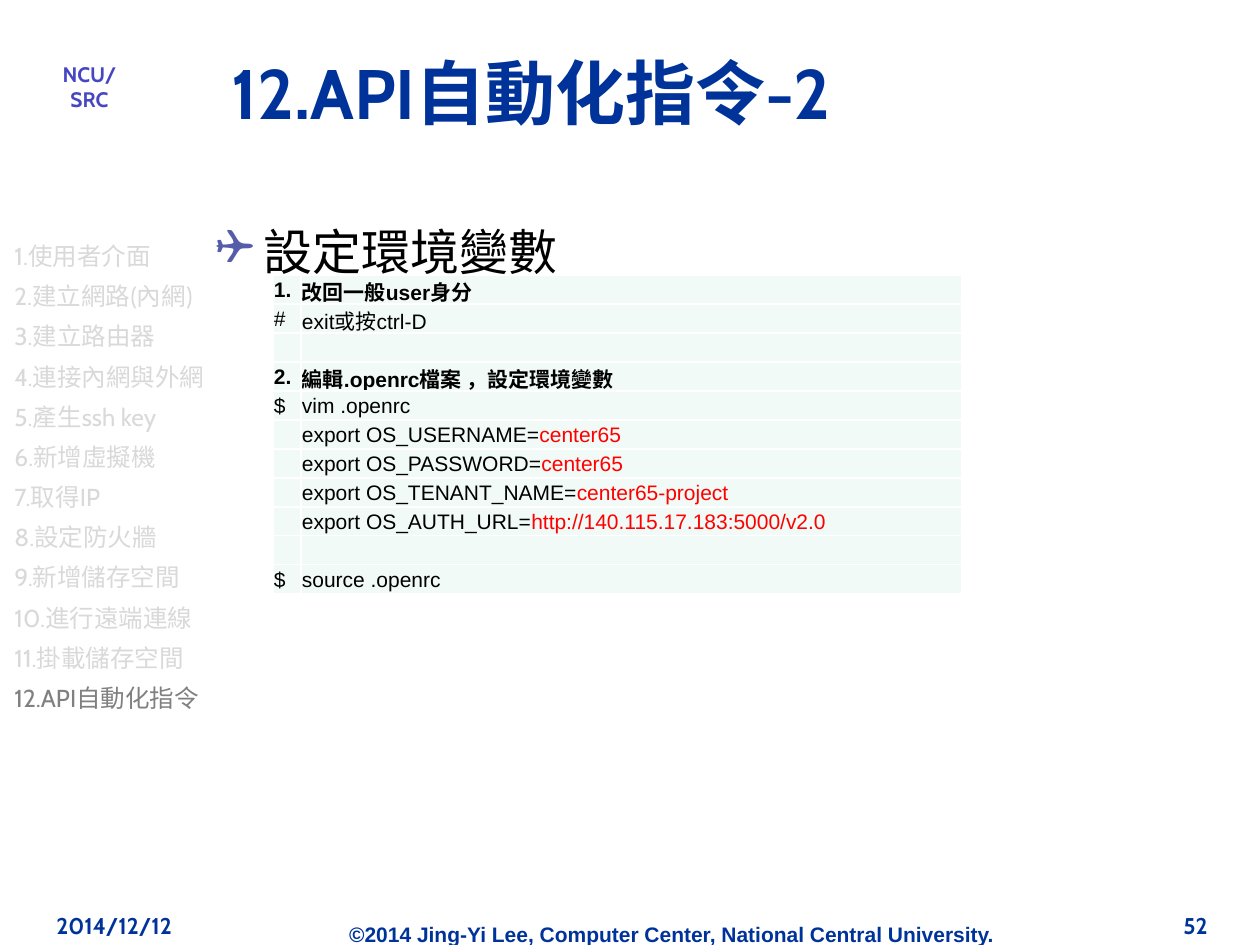
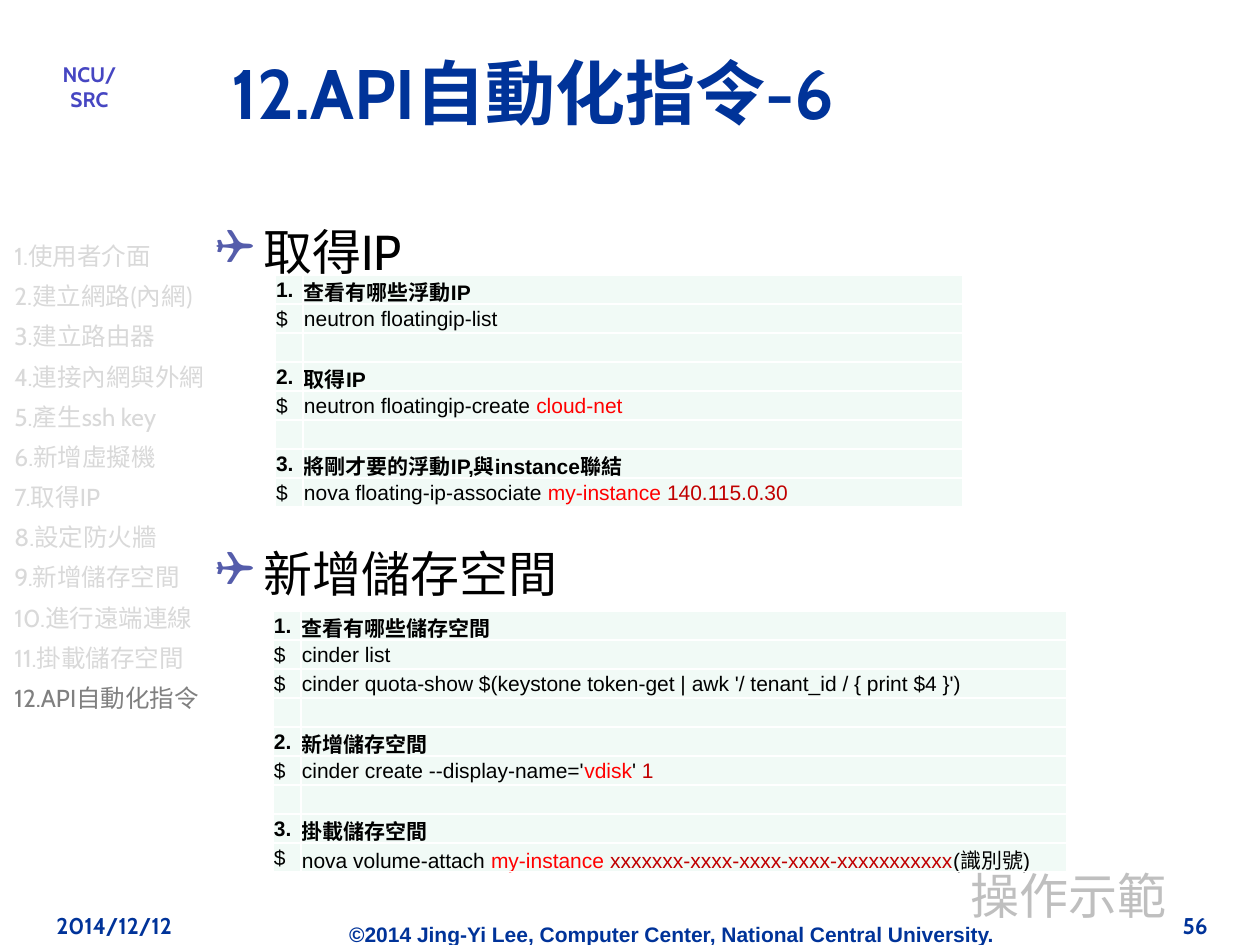
"""Build two command-reference slides on cloud API automation."""
from lxml.etree import SubElement
from pptx import Presentation
from pptx.dml.color import RGBColor
from pptx.enum.text import MSO_ANCHOR, PP_ALIGN
from pptx.oxml.ns import qn
from pptx.util import Pt

PX = 914400 // 126
COLORS = {
    "navy": "003399", "violet": "4646C2", "bullet": "555DAB", "black": "000000",
    "red": "FF0000", "dark_red": "C00000", "muted": "D9D9D9", "current": "808080",
    "demo": "BFBFBF", "cell": "F1FAF6", "border": "FFFFFF",
}
TITLE = "12.API自動化指令"
CHAPTERS = [
    "1.使用者介面", "2.建立網路(內網)", "3.建立路由器", "4.連接內網與外網",
    "5.產生ssh key", "6.新增虛擬機", "7.取得IP", "8.設定防火牆",
    "9.新增儲存空間", "10.進行遠端連線", "11.掛載儲存空間", TITLE,
]
BLANK = ("", [])
ENVIRONMENT = [
    ("1.", [("改回一般user身分", "black")]),
    ("#", [("exit或按ctrl-D", "black")]),
    BLANK,
    ("2.", [("編輯.openrc檔案 ，設定環境變數", "black")]),
    ("$", [("vim .openrc", "black")]),
    ("", [("export OS_USERNAME=", "black"), ("center65", "red")]),
    ("", [("export OS_PASSWORD=", "black"), ("center65", "red")]),
    ("", [("export OS_TENANT_NAME=", "black"), ("center65-project", "red")]),
    ("", [("export OS_AUTH_URL=", "black"), ("http://140.115.17.183:5000/v2.0", "red")]),
    BLANK,
    ("$", [("source .openrc", "black")]),
]
FLOATING_IP = [
    ("1.", [("查看有哪些浮動IP", "black")]),
    ("$", [("neutron floatingip-list", "black")]),
    BLANK,
    ("2.", [("取得IP", "black")]),
    ("$", [("neutron floatingip-create ", "black"), ("cloud-net", "red")]),
    BLANK,
    ("3.", [("將剛才要的浮動IP,與instance聯結", "black")]),
    ("$", [("nova floating-ip-associate ", "black"), ("my-instance ", "red"),
           ("140.115.0.30", "dark_red")]),
]
VOLUME = [
    ("1.", [("查看有哪些儲存空間", "black")]),
    ("$", [("cinder list", "black")]),
    ("$", [("cinder quota-show $(keystone token-get | awk '/ tenant_id / { print $4 }')",
            "black")]),
    BLANK,
    ("2.", [("新增儲存空間", "black")]),
    ("$", [("cinder create --display-name='", "black"), ("vdisk", "red"),
           ("' ", "black"), ("1", "dark_red")]),
    BLANK,
    ("3.", [("掛載儲存空間", "black")]),
    ("$", [("nova volume-attach ", "black"), ("my-instance ", "red"),
           ("xxxxxxx-xxxx-xxxx-xxxx-xxxxxxxxxxx", "dark_red"), ("(識別號)", "black")]),
]
HEADING_TOP, HEADING_STEP = 204, 322
MARK_WIDTH, ROW_HEIGHT = 28, 29


def color(name):
    return RGBColor.from_string(COLORS[name])


def set_font(font, size, tone, bold=False, name="Cabin"):
    font.size, font.bold, font.name = Pt(size), bold, name
    font.color.rgb = color(tone)


def add_text(page, area, lines, size, tone, bold=False, name="Cabin",
             align=PP_ALIGN.LEFT, wrap=True, spacing=None, bullet=False):
    box = page.shapes.add_textbox(*(length * PX for length in area))
    frame = box.text_frame
    frame.word_wrap = wrap
    for index, line in enumerate(lines):
        para = frame.paragraphs[0] if index == 0 else frame.add_paragraph()
        para.text = line
        para.alignment = align
        properties = para._p.get_or_add_pPr()
        if spacing:
            para.line_spacing = spacing
            if index:
                before = SubElement(properties, qn("a:spcBef"))
                SubElement(before, qn("a:spcPct"), val="20000")
        if bullet:
            properties.set("marL", str(48 * PX))
            properties.set("indent", str(-48 * PX))
            tint = SubElement(properties, qn("a:buClr"))
            SubElement(tint, qn("a:srgbClr"), val=COLORS["bullet"])
            SubElement(properties, qn("a:buFont"), typeface="Wingdings")
            SubElement(properties, qn("a:buChar"), char="❑")
        set_font(para.font, size, tone, bold, name)
    return frame


def add_heading(page, text, position):
    top = HEADING_TOP + position * HEADING_STEP
    add_text(page, (203, top, 1032, 86), [text], 28, "black", spacing=1.2, bullet=True)


def fill_cell(cell, spans, bold):
    cell.margin_left = cell.margin_right = cell.margin_top = PX
    cell.margin_bottom = 0
    cell.vertical_anchor = MSO_ANCHOR.MIDDLE
    para = cell.text_frame.paragraphs[0]
    set_font(para.font, 12, "black", bold, "Arial")
    for text, tone in spans:
        span = para.add_run()
        span.text = text
        if tone != "black":
            span.font.color.rgb = color(tone)
    if not spans:
        SubElement(para._p, qn("a:endParaRPr"), sz="1200")
    properties = cell._tc.get_or_add_tcPr()
    for side in ("lnL", "lnR", "lnT", "lnB"):
        line = SubElement(properties, qn(f"a:{side}"), w=str(Pt(1)))
        paint = SubElement(line, qn("a:solidFill"))
        SubElement(paint, qn("a:srgbClr"), val=COLORS["border"])
    cell.fill.solid()
    cell.fill.fore_color.rgb = color("cell")


def add_commands(page, rows, left, top, width):
    area = (left, top, width, ROW_HEIGHT * len(rows))
    table = page.shapes.add_table(len(rows), 2, *(length * PX for length in area)).table
    table.first_row = table.horz_banding = False
    table.columns[0].width = MARK_WIDTH * PX
    table.columns[1].width = (width - MARK_WIDTH) * PX
    for index, (mark, spans) in enumerate(rows):
        table.rows[index].height = ROW_HEIGHT * PX
        bold = mark.endswith(".")
        fill_cell(table.cell(index, 0), [(mark, "black")] if mark else [], bold)
        fill_cell(table.cell(index, 1), spans, bold)


def add_page(deck, part, number):
    page = deck.slides.add_slide(deck.slide_layouts[6])
    add_text(page, (217, 915, 910, 38),
             ["©2014 Jing-Yi Lee, Computer Center, National Central University."],
             12, "navy", True, "Arial", PP_ALIGN.CENTER)
    add_text(page, (44, 55, 91, 30), ["NCU/SRC"], 12, "violet", True,
             align=PP_ALIGN.CENTER, wrap=False)
    chapters = add_text(page, (2, 229, 1071, 660), CHAPTERS, 14, "muted", spacing=1.2)
    chapters.paragraphs[-1].font.color.rgb = color("current")
    title = add_text(page, (219, 35, 1041, 113), [f"{TITLE}-{part}"], 40, "navy", True)
    title.vertical_anchor = MSO_ANCHOR.MIDDLE
    add_text(page, (44, 906, 262, 63), ["2014/12/12"], 13, "navy", True)
    add_text(page, (958, 906, 262, 63), [str(number)], 13, "navy", True,
             align=PP_ALIGN.RIGHT)
    return page


def main():
    deck = Presentation()
    deck.slide_width, deck.slide_height = 1260 * PX, 945 * PX

    page = add_page(deck, 2, 52)
    add_commands(page, ENVIRONMENT, 273, 275, 689)
    add_heading(page, "設定環境變數", 0)

    page = add_page(deck, 6, 56)
    add_heading(page, "取得IP", 0)
    add_heading(page, "新增儲存空間", 1)
    add_text(page, (958, HEADING_TOP + 2 * HEADING_STEP, 240, 86), ["操作示範"],
             28, "demo", spacing=1.2)
    add_commands(page, FLOATING_IP, 275, 275, 688)
    add_commands(page, VOLUME, 273, 611, 794)

    deck.save("out.pptx")


if __name__ == "__main__":
    main()
